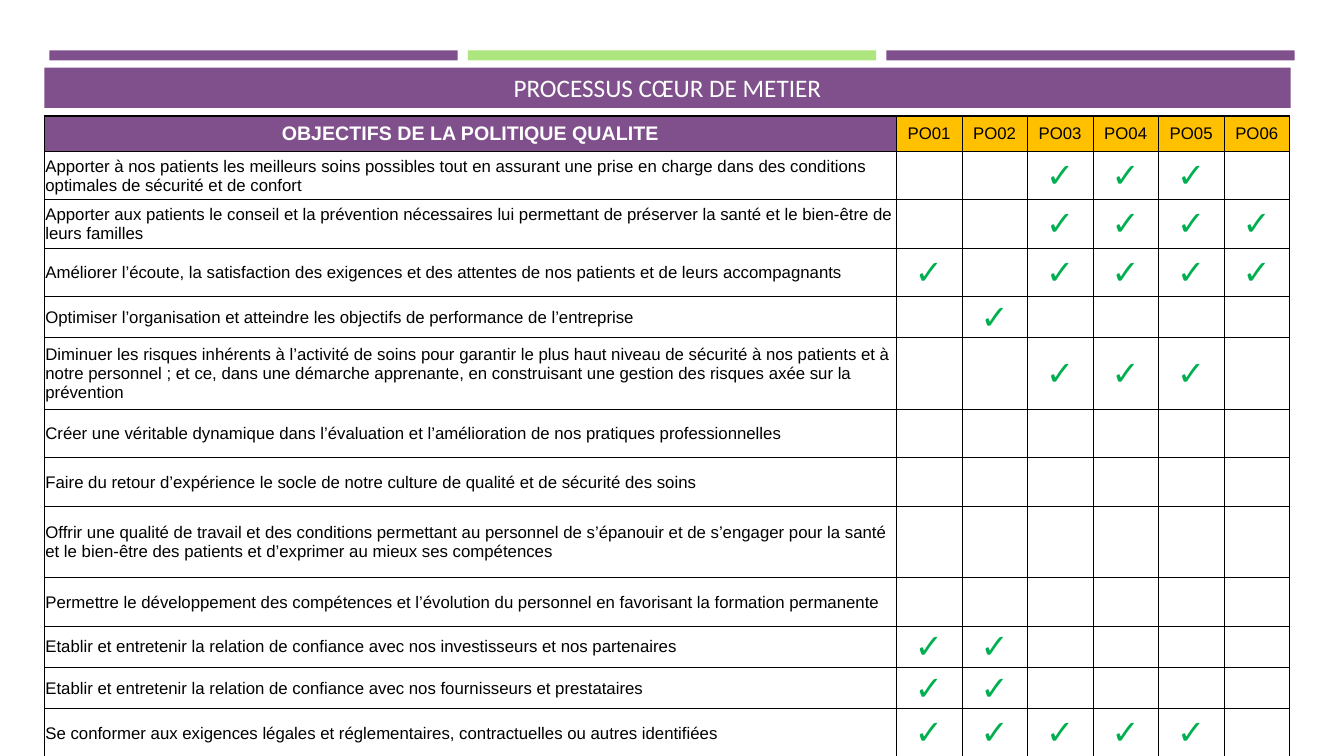
from lxml import etree
from pptx import Presentation
from pptx.dml.color import RGBColor
from pptx.enum import shapes, text
from pptx.oxml import ns
from pptx.util import Inches, Pt

PURPLE = RGBColor(0x7F, 0x50, 0x8B)
LIME = RGBColor(0xAD, 0xE6, 0x7F)
AMBER = RGBColor(0xFF, 0xC0, 0x00)
GREEN = RGBColor(0x00, 0xB0, 0x50)
BLACK = RGBColor(0x00, 0x00, 0x00)
WHITE = RGBColor(0xFF, 0xFF, 0xFF)

LEFT, WIDTH = 0.44, 12.36
CENTER, START = text.PP_ALIGN.CENTER, text.PP_ALIGN.LEFT
CHECK = "✓"

TITLE_FONT = {"name": "Calibri", "size": Pt(18), "bold": False}
HEADING_FONT = {"name": "Arial", "size": Pt(14), "bold": True}
BODY_FONT = {"name": "Arial", "size": Pt(12), "bold": False}
CHECK_FONT = {"name": "Arial", "size": Pt(24), "bold": False}
CELL_FORMAT = {
    "margin_left": Inches(0.01),
    "margin_top": Inches(0.01),
    "margin_right": Inches(0.01),
    "margin_bottom": 0,
    "vertical_anchor": text.MSO_ANCHOR.MIDDLE,
}

PROCESSES = ["PO01", "PO02", "PO03", "PO04", "PO05", "PO06"]
HEADER_HEIGHT = 0.35
OBJECTIVES = [
    ("Apporter à nos patients les meilleurs soins possibles tout en assurant "
     "une prise en charge dans des conditions optimales de sécurité et de "
     "confort", 0.48, (3, 4, 5)),
    ("Apporter aux patients le conseil et la prévention nécessaires lui "
     "permettant de préserver la santé et le bien-être de leurs familles",
     0.48, (3, 4, 5, 6)),
    ("Améliorer l’écoute, la satisfaction des exigences et des attentes de nos "
     "patients et de leurs accompagnants", 0.48, (1, 3, 4, 5, 6)),
    ("Optimiser l’organisation et atteindre les objectifs de performance de "
     "l’entreprise", 0.41, (2,)),
    ("Diminuer les risques inhérents à l’activité de soins pour garantir le "
     "plus haut niveau de sécurité à nos patients et à notre personnel ; et "
     "ce, dans une démarche apprenante, en construisant une gestion des "
     "risques axée sur la prévention", 0.71, (3, 4, 5)),
    ("Créer une véritable dynamique dans l’évaluation et l’amélioration de nos "
     "pratiques professionnelles", 0.48, ()),
    ("Faire du retour d’expérience le socle de notre culture de qualité et de "
     "sécurité des soins", 0.48, ()),
    ("Offrir une qualité de travail et des conditions permettant au personnel "
     "de s’épanouir et de s’engager pour la santé et le bien-être des patients "
     "et d’exprimer au mieux ses compétences", 0.71, ()),
    ("Permettre le développement des compétences et l’évolution du personnel "
     "en favorisant la formation permanente", 0.48, ()),
    ("Etablir et entretenir la relation de confiance avec nos investisseurs et "
     "nos partenaires", 0.41, (1, 2)),
    ("Etablir et entretenir la relation de confiance avec nos fournisseurs et "
     "prestataires", 0.41, (1, 2)),
    ("Se conformer aux exigences légales et réglementaires, contractuelles ou "
     "autres identifiées", 0.48, (1, 2, 3, 4, 5)),
]


def set_attributes(target, values):
    for name, value in values.items():
        setattr(target, name, value)


def set_fill(target, color):
    target.fill.solid()
    target.fill.fore_color.rgb = color


def write_text(frame, content, font, color, alignment):
    paragraph = frame.paragraphs[0]
    paragraph.alignment = alignment
    set_attributes(paragraph.font, font)
    paragraph.font.color.rgb = color
    if content:
        run = paragraph.add_run()
        run.text = content
        set_attributes(run.font, font)
        run.font.color.rgb = color


def add_bar(slide, left, color):
    bar = slide.shapes.add_shape(
        shapes.MSO_SHAPE.RECTANGLE,
        Inches(left), Inches(0.5), Inches(4.05), Inches(0.1))
    bar.shadow.inherit = False
    set_fill(bar, color)
    bar.line.fill.background()


def add_title(slide, content):
    title = slide.shapes.title
    set_attributes(title, {
        "left": Inches(LEFT), "top": Inches(0.67),
        "width": Inches(WIDTH), "height": Inches(0.4)})
    set_fill(title, PURPLE)
    set_attributes(title.text_frame, {
        "word_wrap": True,
        "auto_size": text.MSO_AUTO_SIZE.NONE,
        "vertical_anchor": text.MSO_ANCHOR.MIDDLE,
        "margin_top": Inches(0.05), "margin_bottom": Inches(0.05)})
    write_text(title.text_frame, content, TITLE_FONT, WHITE, CENTER)


def set_borders(cell, widths):
    properties = cell._tc.get_or_add_tcPr()
    for side in "LRTB":
        line = etree.SubElement(
            properties, ns.qn(f"a:ln{side}"), w=str(Pt(widths[side])))
        fill = etree.SubElement(line, ns.qn("a:solidFill"))
        etree.SubElement(fill, ns.qn("a:srgbClr"), val=str(BLACK))


def border_widths(row, column):
    last_row, last_column = len(OBJECTIVES), len(PROCESSES)
    thick = {
        "L": column <= 1,
        "R": column in (0, last_column),
        "T": row == 0 or (row == 1 and column > 0),
        "B": row == last_row or (row == 0 and column > 0),
    }
    return {side: 1 if heavy else 0.5 for side, heavy in thick.items()}


def fill_cell(table, row, column, content, font, color, fill, alignment):
    cell = table.cell(row, column)
    set_borders(cell, border_widths(row, column))
    set_attributes(cell, CELL_FORMAT)
    set_fill(cell, fill)
    write_text(cell.text_frame, content, font, color, alignment)


def add_objectives_table(slide):
    heights = [HEADER_HEIGHT] + [height for _, height, _ in OBJECTIVES]
    widths = [8.45] + [0.65] * len(PROCESSES)
    table = slide.shapes.add_table(
        len(heights), len(widths), Inches(LEFT), Inches(1.15),
        Inches(WIDTH), Inches(sum(heights))).table
    set_attributes(table, {"first_row": False, "horz_banding": False})
    for row, height in zip(table.rows, heights):
        row.height = Inches(height)
    for column, width in zip(table.columns, widths):
        column.width = Inches(width)

    fill_cell(table, 0, 0, "OBJECTIFS DE LA POLITIQUE QUALITE",
              HEADING_FONT, WHITE, PURPLE, CENTER)
    for column, process in enumerate(PROCESSES, 1):
        fill_cell(table, 0, column, process, BODY_FONT, BLACK, AMBER, CENTER)
    for row, (objective, _, checked) in enumerate(OBJECTIVES, 1):
        fill_cell(table, row, 0, objective, BODY_FONT, BLACK, WHITE, START)
        for column in range(1, len(widths)):
            mark, font = (CHECK, CHECK_FONT) if column in checked else ("", BODY_FONT)
            fill_cell(table, row, column, mark, font, GREEN, WHITE, CENTER)


def main():
    presentation = Presentation()
    presentation.slide_width = Inches(13.33)
    presentation.slide_height = Inches(7.5)
    slide = presentation.slides.add_slide(presentation.slide_layouts[5])
    for index, color in enumerate([PURPLE, LIME, PURPLE]):
        add_bar(slide, 0.49 + index * 4.15, color)
    add_title(slide, "PROCESSUS CŒUR DE METIER")
    add_objectives_table(slide)
    presentation.save("out.pptx")


if __name__ == "__main__":
    main()
